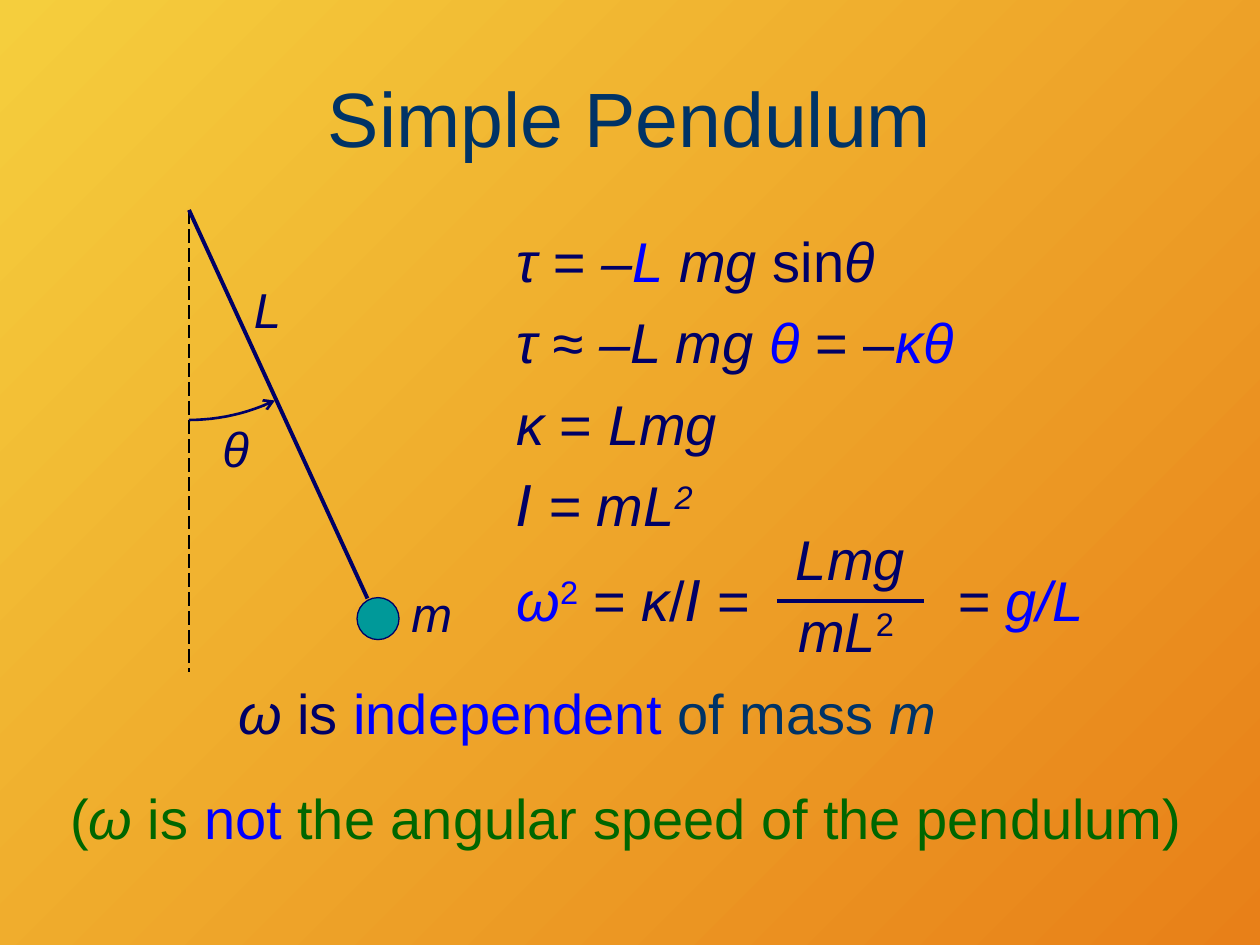
from math import cos, radians, sin
from lxml import etree
from pptx import Presentation
from pptx.dml.color import RGBColor
from pptx.enum.dml import MSO_LINE
from pptx.enum.shapes import MSO_CONNECTOR, MSO_SHAPE
from pptx.enum.text import MSO_ANCHOR, MSO_AUTO_SIZE, PP_ALIGN
from pptx.oxml.ns import qn
from pptx.util import Pt

LINE, OVAL, DASH = MSO_CONNECTOR.STRAIGHT, MSO_SHAPE.OVAL, MSO_LINE.LONG_DASH
LEFT, MID = PP_ALIGN.LEFT, PP_ALIGN.CENTER
TOP, HALF = MSO_ANCHOR.TOP, MSO_ANCHOR.MIDDLE
GROW, FIXED = MSO_AUTO_SIZE.SHAPE_TO_FIT_TEXT, MSO_AUTO_SIZE.NONE

THEME = {
    "navy": "000066", "blue": "0000FF", "slate": "003366", "green": "006600",
    "teal": "009999", "black": "000000", "gold": "F5CE3D", "rust": "E88018",
    "font": "Arial", "math": "DejaVu Sans",
    "title": 44, "body": 32, "label": 28, "gap": 8,
}


def write(host, box, rows, size="body", align=LEFT, gap=THEME["gap"], **extra):
    frame = host.add_textbox(*map(Pt, box)).text_frame
    form = {"word_wrap": True, "auto_size": FIXED, "vertical_anchor": TOP} | extra
    for key, val in form.items():
        setattr(frame, key, val)
    for num, row in enumerate(rows):
        para = frame.add_paragraph() if num else frame.paragraphs[0]
        para.alignment, para.space_before = align, Pt(gap)
        for text, tint, *marks in row:
            run = para.add_run()
            run.text = text
            look = {
                "size": Pt(THEME[size]),
                "italic": "i" in marks,
                "name": THEME["math" if "math" in marks else "font"],
            }
            for key, val in look.items():
                setattr(run.font, key, val)
            run.font.color.rgb = RGBColor.from_string(THEME[tint])
            if "sup" in marks:
                run.font._element.set("baseline", "30000")


def rule(host, ends, tint, width, dash=None):
    line = host.add_connector(LINE, *map(Pt, ends))
    line.line.color.rgb = RGBColor.from_string(THEME[tint])
    line.line.width = Pt(width)
    line.line.dash_style = dash
    etree.SubElement(line._element.spPr, qn("a:effectLst"))


deck = Presentation()
deck.slide_width, deck.slide_height = Pt(720), Pt(540)
slide = deck.slides.add_slide(deck.slide_layouts[6])
shapes = slide.shapes

back = slide.background.fill
back.gradient()
back.gradient_angle = 315
for stop, tint in zip(back.gradient_stops, ("gold", "rust")):
    stop.color.rgb = RGBColor.from_string(THEME[tint])

write(shapes, (36, 21.6, 648, 90), [[("Simple Pendulum", "slate")]],
      "title", MID, 0, vertical_anchor=HALF)

write(shapes, (288, 126, 366, 192), [
    [("τ = –", "navy", "i"), ("L", "blue", "i"), (" mg ", "navy", "i"),
     ("sin", "navy"), ("θ", "navy", "i")],
    [("τ ≈ –L mg ", "navy", "i"), ("θ", "blue", "i"), (" = –", "navy"),
     ("κθ", "blue", "i")],
    [("κ", "navy", "i"), (" =", "navy"), (" Lmg", "navy", "i")],
    [("I", "navy", "i", "math"), (" = mL", "navy", "i"), ("2", "navy", "i", "sup")],
])

swing = shapes.add_group_shape().shapes
rule(swing, (108, 120, 108, 384), "black", 1, DASH)
rule(swing, (108, 120, 210, 342), "navy", 2.25)

bob = swing.add_shape(OVAL, Pt(204), Pt(341.5), Pt(24), Pt(24))
bob.shadow.inherit = False
bob.fill.solid()
bob.fill.fore_color.rgb = RGBColor.from_string(THEME["teal"])
bob.line.color.rgb = RGBColor.from_string(THEME["navy"])
bob.line.width = Pt(0.75)

angles = [radians(25.5 * step / 12) for step in range(13)]
dots = [(Pt(108 + 114 * sin(a)), Pt(126 + 114 * cos(a))) for a in angles]
pen = swing.build_freeform(*dots[0])
pen.add_line_segments(dots[1:], close=False)
arc = pen.convert_to_shape()
arc.shadow.inherit = False
arc.fill.background()
arc.line.color.rgb = RGBColor.from_string(THEME["navy"])
arc.line.width = Pt(1.5)
etree.SubElement(arc.line._get_or_add_ln(), qn("a:tailEnd"), type="arrow")

for text, box, wrap in (
    ("θ", (120, 235.5, 37.5, 41), True),
    ("L", (138, 156, 30, 41), False),
    ("m", (228, 330, 38, 41), False),
):
    write(swing, box, [[(text, "navy", "i")]], "label", gap=0,
          word_wrap=wrap, auto_size=GROW)

write(shapes, (288, 319.5, 156, 54), [[
    ("ω", "blue", "i"), ("2", "blue", "sup"), (" = ", "navy"), ("κ", "navy", "i"),
    ("/", "navy"), ("I", "navy", "i", "math"), (" =", "navy")]])
write(shapes, (540, 319.5, 90, 46), [[("= ", "navy", "i"), ("g/L", "blue", "i")]])

ratio = shapes.add_group_shape().shapes
write(ratio, (444, 296, 84, 46), [[("Lmg ", "navy", "i")]], align=MID)
write(ratio, (447, 337.5, 78, 46),
      [[("mL", "navy", "i"), ("2 ", "navy", "sup")]], align=MID)
rule(ratio, (444, 343.5, 528, 343.5), "navy", 2.25)

write(shapes, (129, 384, 462, 54), [[
    ("ω", "navy", "i"), (" is", "navy"), (" independent", "blue"),
    (" of mass ", "slate"), ("m", "slate", "i")]])
write(shapes, (33, 444, 654, 54), [[
    ("(", "green"), ("ω", "green", "i"), (" is ", "green"), ("not", "blue"),
    (" the angular speed of the pendulum)", "green")]])

deck.save("out.pptx")
